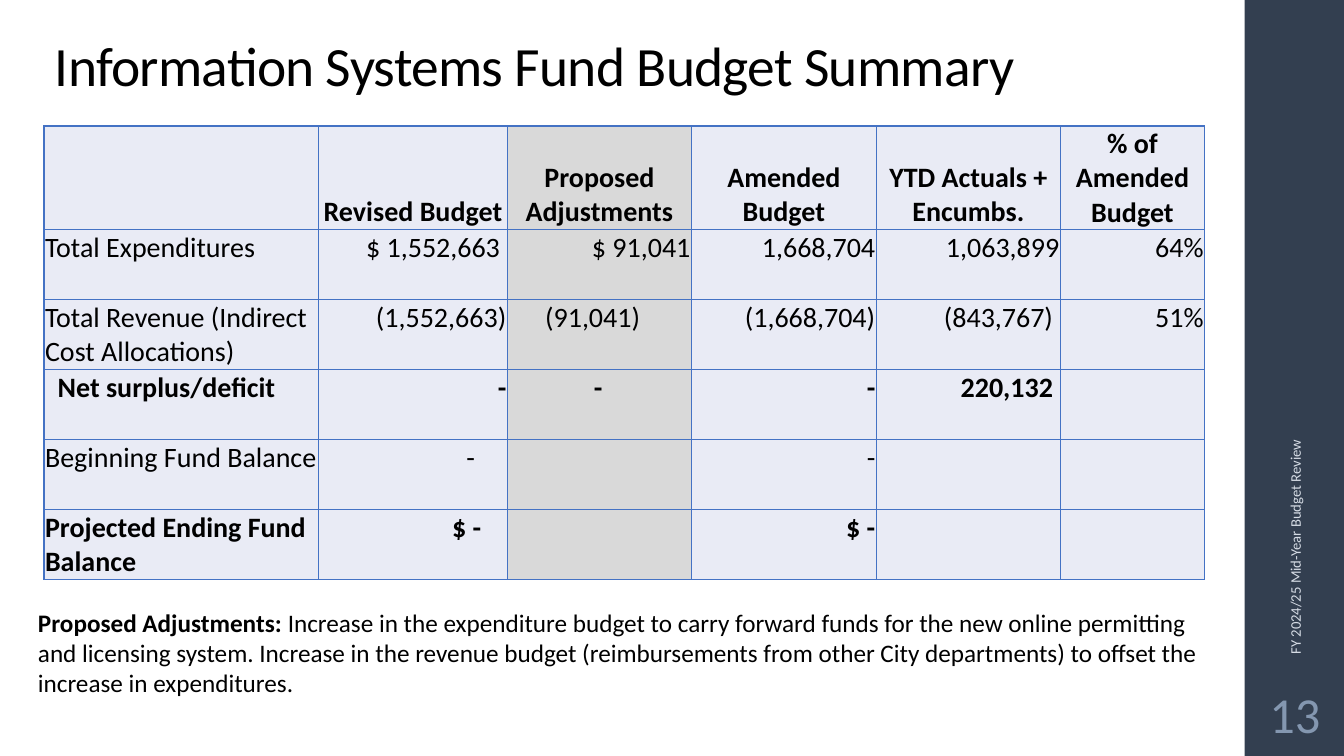
from pptx import Presentation
from pptx.dml.color import RGBColor
from pptx.enum.shapes import MSO_SHAPE
from pptx.enum.text import MSO_ANCHOR, MSO_AUTO_SIZE, PP_ALIGN
from pptx.oxml import parse_xml
from pptx.oxml.ns import nsdecls
from pptx.util import Pt

RECT = MSO_SHAPE.RECTANGLE
TOP, MID, BASE = MSO_ANCHOR.TOP, MSO_ANCHOR.MIDDLE, MSO_ANCHOR.BOTTOM
LEFT, MIDDLE, RIGHT = PP_ALIGN.LEFT, PP_ALIGN.CENTER, PP_ALIGN.RIGHT
NO_FIT = MSO_AUTO_SIZE.NONE

BLACK = RGBColor(0x00, 0x00, 0x00)
NAVY = RGBColor(0x33, 0x3F, 0x50)
PALE = RGBColor(0xD6, 0xDC, 0xE5)
STEEL = RGBColor(0x84, 0x97, 0xB0)
BLUE = RGBColor(0x44, 0x72, 0xC4)
ICE = RGBColor(0xE9, 0xEB, 0xF5)
GRAY = RGBColor(0xD9, 0xD9, 0xD9)

TITLE_ONLY = 5
ADJUST = 2  # column of the proposed adjustments
WIDTHS = [196, 135, 131.5, 132, 131.5, 103]
HEIGHTS = [74] + [50] * 5
HEAD = ["", "Revised Budget", "Proposed Adjustments", "Amended Budget",
        "YTD Actuals + Encumbs.", "% of Amended Budget"]
# Each row: bold, cells, and the extra side margin of each cell in points
ROWS = [
    (False, ["Total Expenditures", "$ 1,552,663", "$ 91,041", "1,668,704",
             "1,063,899", "64%"], [0, 4.5, 0, 0, 0, 0]),
    (False, ["Total Revenue (Indirect Cost Allocations)", "(1,552,663)",
             "(91,041)", "(1,668,704)", "(843,767)", "51%"],
     [0, 0, 36, 0, 4.5, 0]),
    (True, ["Net surplus/deficit", "-", "-", "-", "220,132", ""],
     [9, 0, 63, 0, 4.5, 0]),
    (False, ["Beginning Fund Balance", "-", "", "-", "", ""],
     [0, 22.5, 0, 0, 0, 0]),
    (True, ["Projected Ending Fund Balance", "$ -", "", "$ -", "", ""],
     [0, 18, 0, 0, 0, 0]),
]
NOTE = ("Increase in the expenditure budget to carry forward funds for the new "
        "online permitting and licensing system. Increase in the revenue budget "
        "(reimbursements from other City departments) to offset the increase in "
        "expenditures.")


class Deck:
    font = "Calibri"

    def __init__(self):
        self.prs = Presentation()
        self.prs.slide_width, self.prs.slide_height = Pt(960), Pt(540)
        layout = self.prs.slide_layouts[TITLE_ONLY]
        self.slide = self.prs.slides.add_slide(layout)

    def run(self, para, text, size, color=BLACK, bold=False):
        run = para.add_run()
        run.text = text
        font = run.font
        font.name, font.size, font.bold = self.font, Pt(size), bold
        font.color.rgb = color
        return run

    def title(self, x, y, w, h, text, size):
        shape = self.slide.shapes.title
        shape.left, shape.top, shape.width, shape.height = map(Pt, (x, y, w, h))
        frame = shape.text_frame
        frame.auto_size, frame.vertical_anchor = NO_FIT, BASE
        para = frame.paragraphs[0]
        para.alignment, para.line_spacing = LEFT, 0.9
        run = self.run(para, text, size)
        run.font._element.set("spc", "-50")

    def bar(self, x, y, w, h, color):
        shape = self.slide.shapes.add_shape(RECT, *map(Pt, (x, y, w, h)))
        shape.shadow.inherit = False
        shape.fill.solid()
        shape.fill.fore_color.rgb = color
        shape.line.fill.background()

    def text(self, x, y, w, h, runs, size, color=BLACK, align=LEFT,
             anchor=TOP, turn=0):
        """Add a text box; runs is a list of (text, bold)."""
        box = self.slide.shapes.add_textbox(*map(Pt, (x, y, w, h)))
        box.rotation = turn
        frame = box.text_frame
        frame.word_wrap, frame.vertical_anchor = True, anchor
        para = frame.paragraphs[0]
        para.alignment = align
        for words, bold in runs:
            self.run(para, words, size, color, bold)

    def edge(self, cell, color):
        """Draw a one-point line on all four sides of the cell."""
        props = cell._tc.get_or_add_tcPr()
        for side in "LRTB":
            props.append(parse_xml(
                f'<a:ln{side} {nsdecls("a")} w="12700"><a:solidFill>'
                f'<a:srgbClr val="{color}"/></a:solidFill></a:ln{side}>'))

    def cell(self, cell, text, bold, fill, align, anchor, pad):
        cell.margin_left = cell.margin_right = cell.margin_top = Pt(0.7)
        cell.margin_bottom = 0
        if align == LEFT:
            cell.margin_left = Pt(0.7 + pad)
        else:
            cell.margin_right = Pt(0.7 + pad)
        cell.vertical_anchor = anchor
        self.edge(cell, BLUE)
        cell.fill.solid()
        cell.fill.fore_color.rgb = fill
        if text:
            para = cell.text_frame.paragraphs[0]
            para.alignment = align
            self.run(para, text, 20, bold=bold)

    def table(self, x, y):
        rows = [(True, HEAD, [0] * len(HEAD))] + ROWS
        frame = self.slide.shapes.add_table(
            len(rows), len(WIDTHS), Pt(x), Pt(y),
            Pt(sum(WIDTHS)), Pt(sum(HEIGHTS)))
        table = frame.table
        table.horz_banding = False
        table.first_row = False
        for col, width in zip(table.columns, WIDTHS):
            col.width = Pt(width)
        for r, (bold, texts, pads) in enumerate(rows):
            table.rows[r].height = Pt(HEIGHTS[r])
            for c, (text, pad) in enumerate(zip(texts, pads)):
                fill = GRAY if c == ADJUST else ICE
                align = MIDDLE if r == 0 else RIGHT if c else LEFT
                anchor = BASE if r == 0 else TOP
                self.cell(table.cell(r, c), text, bold, fill, align, anchor, pad)


def main():
    deck = Deck()
    deck.bar(889, 0, 72, 540, NAVY)
    deck.title(32, 37.5, 763, 36.5, "Information Systems Fund Budget Summary", 39.6)
    deck.text(784, 319, 282, 29, [("FY 2024/25 Mid-Year Budget Review", False)],
              10.5, PALE, anchor=MID, turn=270)
    deck.table(31.5, 90)
    deck.text(889, 486, 72, 47, [("13", False)], 36, STEEL, MIDDLE, MID)
    deck.text(20, 430, 857.5, 73,
              [("Proposed Adjustments: ", True), (NOTE, False)], 18)
    deck.prs.save("out.pptx")


if __name__ == "__main__":
    main()
